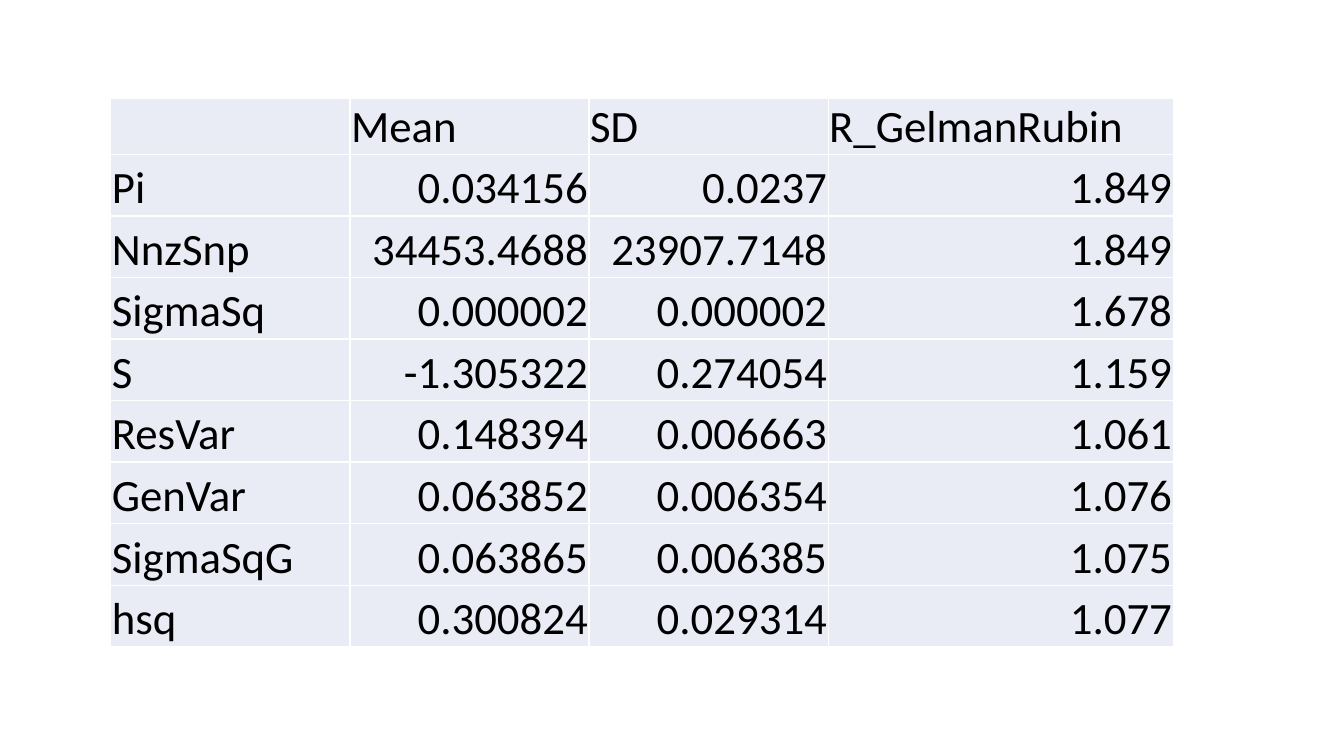
from dataclasses import dataclass

from lxml import etree
from pptx import Presentation
from pptx.dml.color import RGBColor
from pptx.enum.text import MSO_ANCHOR, PP_ALIGN
from pptx.oxml.ns import qn
from pptx.util import Pt

BOTTOM = MSO_ANCHOR.BOTTOM
LEFT, RIGHT = PP_ALIGN.LEFT, PP_ALIGN.RIGHT


@dataclass(frozen=True)
class Theme:
    font: str = "Calibri"
    size: float = 32
    ink: str = "000000"
    fill: str = "E9EBF5"
    rule: str = "FFFFFF"
    weight: float = 1
    inset: float = 0.75


class Deck:
    def __init__(self, theme, width, height):
        self.theme = theme
        self.deck = Presentation()
        self.deck.slide_width = Pt(width)
        self.deck.slide_height = Pt(height)
        self.slide = self.deck.slides.add_slide(self.deck.slide_layouts[6])

    def table(self, left, top, widths, heights, rows):
        frame = self.slide.shapes.add_table(
            len(rows), len(widths), Pt(left), Pt(top),
            Pt(sum(widths)), Pt(sum(heights)))
        grid = frame.table
        grid.first_row = False
        grid.horz_banding = False
        for column, width in zip(grid.columns, widths):
            column.width = Pt(width)
        for row, height in zip(grid.rows, heights):
            row.height = Pt(height)
        for i, row in enumerate(rows):
            for j, text in enumerate(row):
                self.cell(grid.cell(i, j), text, RIGHT if i and j else LEFT)

    def cell(self, cell, text, align):
        theme = self.theme
        cell.margin_left = cell.margin_right = cell.margin_top = Pt(theme.inset)
        cell.margin_bottom = 0
        cell.vertical_anchor = BOTTOM
        self.border(cell)
        cell.fill.solid()
        cell.fill.fore_color.rgb = RGBColor.from_string(theme.fill)
        cell.text = text
        para = cell.text_frame.paragraphs[0]
        para.alignment = align
        para.font.name = theme.font
        para.font.size = Pt(theme.size)
        para.font.color.rgb = RGBColor.from_string(theme.ink)

    def border(self, cell):
        props = cell._tc.get_or_add_tcPr()
        for side in ("a:lnL", "a:lnR", "a:lnT", "a:lnB"):
            line = etree.SubElement(props, qn(side), w=str(Pt(self.theme.weight)))
            fill = etree.SubElement(line, qn("a:solidFill"))
            etree.SubElement(fill, qn("a:srgbClr"), val=self.theme.rule)

    def save(self):
        self.deck.save("out.pptx")


ROWS = [
    ("", "Mean", "SD", "R_GelmanRubin"),
    ("Pi", "0.034156", "0.0237", "1.849"),
    ("NnzSnp", "34453.4688", "23907.7148", "1.849"),
    ("SigmaSq", "0.000002", "0.000002", "1.678"),
    ("S", "-1.305322", "0.274054", "1.159"),
    ("ResVar", "0.148394", "0.006663", "1.061"),
    ("GenVar", "0.063852", "0.006354", "1.076"),
    ("SigmaSqG", "0.063865", "0.006385", "1.075"),
    ("hsq", "0.300824", "0.029314", "1.077"),
]


def main():
    deck = Deck(Theme(), 960, 540)
    widths = [170.8] * 3 + [246.4]
    heights = [39.2] + [43.95] * (len(ROWS) - 1)
    deck.table(79.2, 70.5, widths, heights, ROWS)
    deck.save()


if __name__ == "__main__":
    main()
